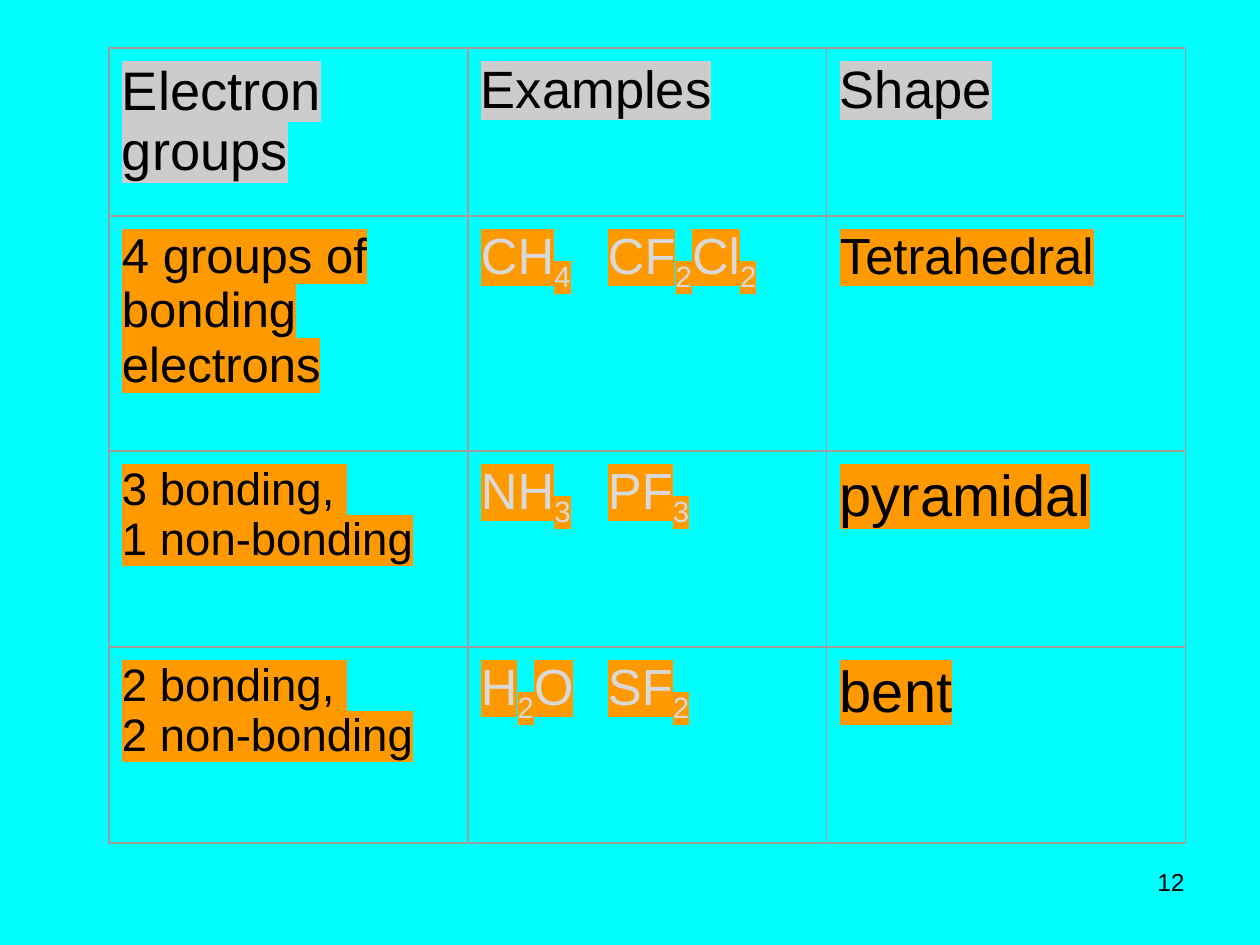
"""Build a slide with a table of electron groups and molecular shapes."""
import pptx
import pptx.util
import pptx.dml.color
import pptx.enum.text
import pptx.oxml
import pptx.oxml.ns

HUES = {"back": "00FFFF", "ink": "000000", "pale": "D9D9D9",
        "head": "CCCCCC", "mark": "FF9900", "edge": "9E9E9E"}
NS = pptx.oxml.ns.nsdecls("a")


def px(num):
    return pptx.util.Emu(round(num * 914400 / 126))


def add_run(para, text, size, ink="ink", mark=None, sub=False):
    run = para.add_run()
    run.text = text
    run.font.size = pptx.util.Pt(size)
    run.font.name = "Arial"
    run.font.color.rgb = pptx.dml.color.RGBColor.from_string(HUES[ink])
    props = run.font._element
    if sub:
        props.set("baseline", "-25000")
    if mark:
        props.find(pptx.oxml.ns.qn("a:solidFill")).addnext(pptx.oxml.parse_xml(
            f'<a:highlight {NS}><a:srgbClr val="{HUES[mark]}"/></a:highlight>'))


deck = pptx.Presentation()
deck.slide_width, deck.slide_height = px(1260), px(945)
slide = deck.slides.add_slide(deck.slide_layouts[6])
slide.background.fill.solid()
slide.background.fill.fore_color.rgb = pptx.dml.color.RGBColor.from_string(HUES["back"])

box = slide.shapes.add_textbox(px(903), px(861), px(294), px(65))
box.text_frame.word_wrap = True
para = box.text_frame.paragraphs[0]
para.alignment = pptx.enum.text.PP_ALIGN.RIGHT
add_run(para, "12", 14)

# Each cell holds a size and its lines; digits in formulas are subscripts.
rows = [
    [(31, ["Electron groups"]), (30, ["Examples"]), (30, ["Shape"])],
    [(28, ["4 groups of bonding electrons"]),
     (29, [["CH", "4", "\tCF", "2", "Cl", "2"]]), (29, ["Tetrahedral"])],
    [(26, ["3 bonding, ", "1 non-bonding"]),
     (29, [["NH", "3", "\tPF", "3"]]), (33, ["pyramidal"])],
    [(26, ["2 bonding, ", "2 non-bonding"]),
     (29, [["H", "2", "O", "\tSF", "2"]]), (33, ["bent"])],
]
highs = [168, 235, 196, 196]
wide = 359
table = slide.shapes.add_table(4, 3, px(109), px(48), px(3 * wide), px(sum(highs))).table
table.first_row = table.horz_banding = False
for col in table.columns:
    col.width = px(wide)

for i, row in enumerate(rows):
    table.rows[i].height = px(highs[i])
    mark = "mark" if i else "head"
    for j, (size, lines) in enumerate(row):
        cell = table.cell(i, j)
        cell.margin_left = cell.margin_right = px(13)
        cell.margin_top = cell.margin_bottom = px(13)
        cell.fill.background()
        for k, side in enumerate("LRTB"):
            cell._tc.tcPr.insert(k, pptx.oxml.parse_xml(
                f'<a:ln{side} {NS} w="9525"><a:solidFill><a:srgbClr val="{HUES["edge"]}"/>'
                f'</a:solidFill></a:ln{side}>'))
        frame = cell.text_frame
        for k, line in enumerate(lines):
            para = frame.add_paragraph() if k else frame.paragraphs[0]
            if isinstance(line, str):
                add_run(para, line, size, mark=mark)
                continue
            para._p.get_or_add_pPr().append(pptx.oxml.parse_xml(
                f'<a:tabLst {NS}><a:tab pos="{px(127)}" algn="l"/></a:tabLst>'))
            for part in line:
                add_run(para, part, size, "pale", mark, part.isdigit())

deck.save("out.pptx")
